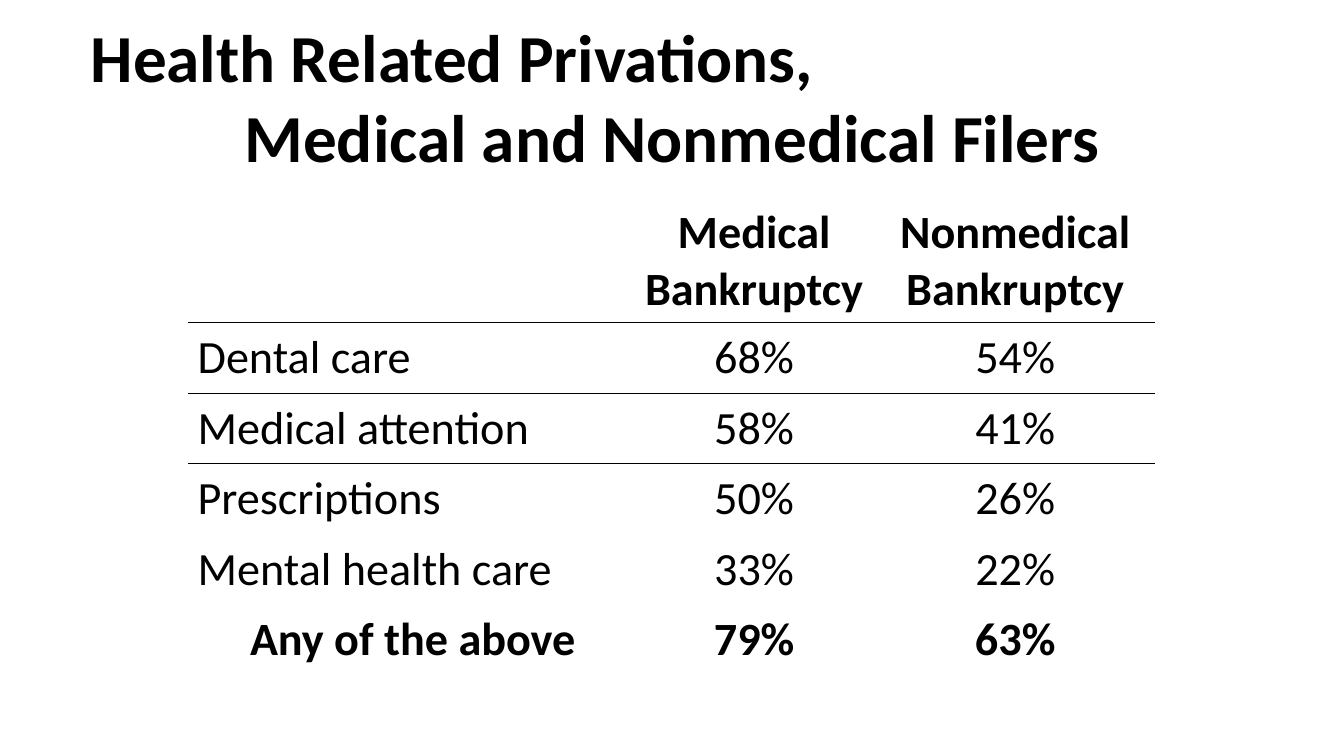
from dataclasses import dataclass

from lxml.etree import SubElement
from pptx import Presentation
from pptx.dml.color import RGBColor
from pptx.enum.text import MSO_ANCHOR as Anchor, PP_ALIGN as Align
from pptx.oxml.ns import qn
from pptx.table import _Cell as Cell
from pptx.text.text import _Paragraph as Paragraph
from pptx.util import Inches, Pt

COLORS = {"text": "000000", "rule": "000000", "background": "FFFFFF"}
FONT = "Calibri"
COLUMN_WIDTHS = (4.42, 2.4, 2.78)
HEADER_HEIGHT, ROW_HEIGHT = 1.22, 0.7
PLAIN_TABLE_STYLE = "{2D5ABB26-0587-4C30-8999-92F81FD0307C}"


@dataclass(frozen=True)
class TableRow:
    texts: tuple[str, str, str]
    bold: bool = False
    indent: float = 0
    anchor: Anchor = Anchor.MIDDLE
    rule_above: float = 0
    rule_below: float = 0


ROWS = (
    TableRow(("", "Medical Bankruptcy", "Nonmedical Bankruptcy"), bold=True,
             anchor=Anchor.TOP, rule_below=1),
    TableRow(("Dental care", "68%", "54%"), rule_above=1, rule_below=0.5),
    TableRow(("Medical attention", "58%", "41%"), rule_above=0.5),
    TableRow(("Prescriptions", "50%", "26%")),
    TableRow(("Mental health care", "33%", "22%")),
    TableRow(("Any of the above", "79%", "63%"), bold=True, indent=0.52),
)


def write_text(paragraph: Paragraph, text: str, *, size: float,
               bold: bool = False, align: Align = Align.LEFT) -> None:
    paragraph.alignment = align
    font = paragraph.font
    if text:
        run = paragraph.add_run()
        run.text = text
        font = run.font
    font.name, font.size, font.bold = FONT, Pt(size), bold
    font.color.rgb = RGBColor.from_string(COLORS["text"])


def add_rule(cell: Cell, tag: str, width: float) -> None:
    properties = cell._tc.get_or_add_tcPr()
    line = SubElement(properties, qn(tag), w=str(Pt(width)))
    fill = SubElement(line, qn("a:solidFill"))
    SubElement(fill, qn("a:srgbClr"), val=COLORS["rule"])
    properties.insert(0, line)


def fill_cell(cell: Cell, row: TableRow, column: int) -> None:
    cell.fill.solid()
    cell.fill.fore_color.rgb = RGBColor.from_string(COLORS["background"])
    cell.vertical_anchor = row.anchor
    if column == 0:
        cell.margin_left = Inches(0.1 + row.indent)
    write_text(cell.text_frame.paragraphs[0], row.texts[column], size=33,
               bold=row.bold, align=Align.CENTER if column else Align.LEFT)
    # Each rule goes first in the cell properties, so the top one comes last
    for tag, width in (("a:lnB", row.rule_below), ("a:lnT", row.rule_above)):
        if width:
            add_rule(cell, tag, width)


def main() -> None:
    presentation = Presentation()
    presentation.slide_width = Inches(13.33)
    presentation.slide_height = Inches(7.5)
    slide = presentation.slides.add_slide(presentation.slide_layouts[6])

    # Title
    title = slide.shapes.add_textbox(
        Inches(0.67), Inches(0.42), Inches(12), Inches(1.06))
    frame = title.text_frame
    frame.word_wrap = True
    frame.vertical_anchor = Anchor.MIDDLE
    frame.margin_left = frame.margin_right = Inches(0.23)
    first_line = frame.paragraphs[0]
    first_line.space_before = Pt(4)
    write_text(first_line, "Health Related Privations,", size=48, bold=True)
    write_text(frame.add_paragraph(), "Medical and Nonmedical Filers",
               size=48, bold=True, align=Align.CENTER)

    # Table
    heights = [HEADER_HEIGHT] + [ROW_HEIGHT] * (len(ROWS) - 1)
    graphic_frame = slide.shapes.add_table(
        len(ROWS), len(COLUMN_WIDTHS), Inches(1.86), Inches(1.98),
        Inches(sum(COLUMN_WIDTHS)), Inches(sum(heights)))
    table = graphic_frame.table
    table.first_row = table.horz_banding = False
    next(graphic_frame.element.iter(qn("a:tableStyleId"))).text = PLAIN_TABLE_STYLE
    for column, width in zip(table.columns, COLUMN_WIDTHS):
        column.width = Inches(width)
    for index, (row, height) in enumerate(zip(ROWS, heights)):
        table.rows[index].height = Inches(height)
        for column in range(len(COLUMN_WIDTHS)):
            fill_cell(table.cell(index, column), row, column)

    presentation.save("out.pptx")


if __name__ == "__main__":
    main()
